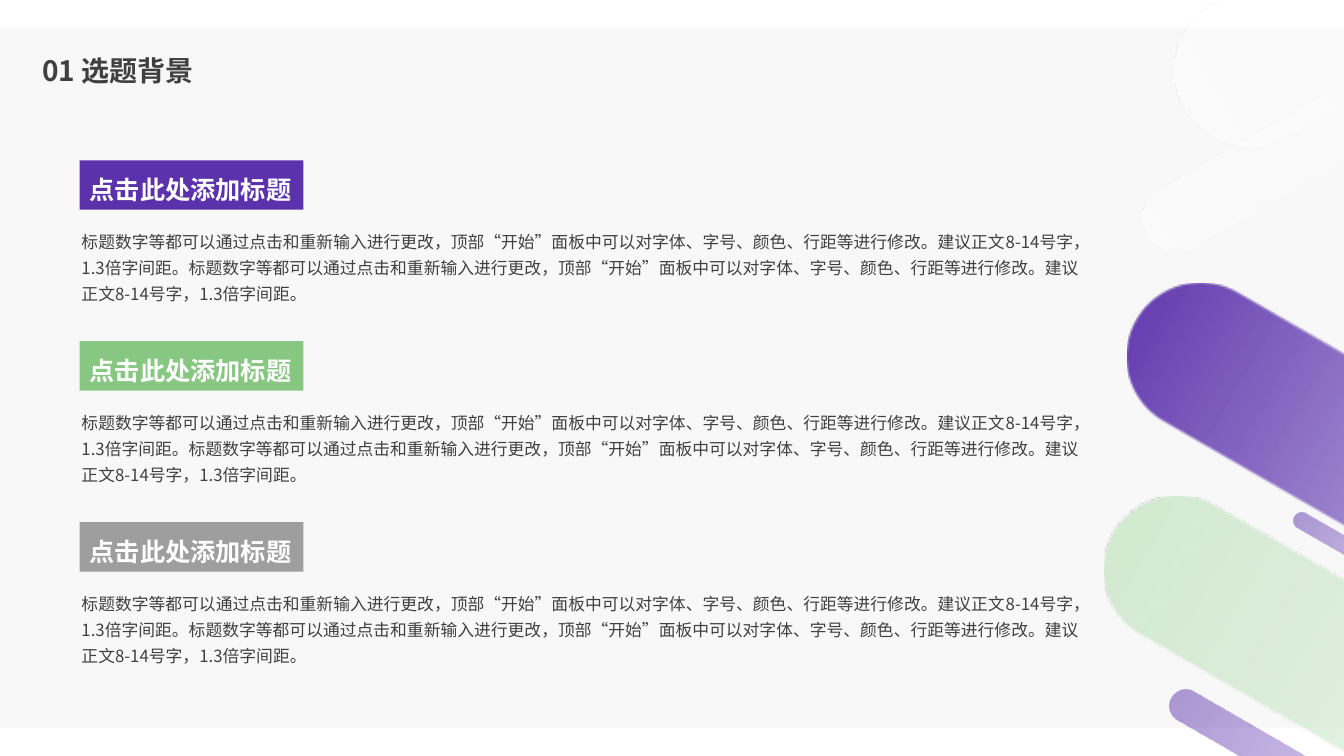
from lxml.etree import SubElement
from pptx import Presentation
from pptx.dml.color import RGBColor
from pptx.enum.shapes import MSO_SHAPE
from pptx.enum.text import MSO_ANCHOR, MSO_AUTO_SIZE, PP_ALIGN
from pptx.oxml.ns import qn
from pptx.util import Inches, Pt

SANS = "Noto Sans CJK SC"
INK = "404040"
HEAD = "点击此处添加标题"
BODY = (
    "标题数字等都可以通过点击和重新输入进行更改，顶部“开始”面板中可以对"
    "字体、字号、颜色、行距等进行修改。建议正文8-14号字，1.3倍字间距。"
) * 2

# Gradient stops: position %, colour, opacity %
FADE = [(85, "FFFFFF", 50), (100, "FFFFFF", 50)]
PURPLE = [(0, "5B32AB", 100), (23, "5F34B2", 40)] + FADE
LILAC = [(0, "5B32AB", 50), (23, "5F34B2", 40)] + FADE
GREEN = [(0, "D0E9CE", 100), (22, "D0E9CE", 50)] + FADE
WHITE = [(0, "FFFFFF", 50), (21, "FFFFFF", 29), (85, "FFFFFF", 0), (100, "FFFFFF", 0)]

# Left, top, length, thickness before turning; turn in degrees; stops
PILLS = [
    (9.9, 7.58, 20.55, 1.47, 30, PURPLE),
    (10.96, -2.65, 11.87, 1.51, -30, WHITE),
    (11.02, 0.68, 5.27, 0.67, -30, WHITE),
    (9.68, 9.7, 20.55, 1.47, 30, GREEN),
    (12.68, 5.65, 2.44, 0.17, 30, LILAC),
    (11.31, 7.93, 4.69, 0.33, 30, LILAC),
]


def color(code):
    return RGBColor.from_string(code)


def write(shape, text, font, size, code, bold=False, space=1.3, wrap=True):
    frame = shape.text_frame
    frame.word_wrap = wrap
    para = frame.paragraphs[0]
    para.alignment = PP_ALIGN.LEFT
    para.line_spacing = space
    run = para.add_run()
    run.text = text
    for key, value in {"name": font, "size": Pt(size), "bold": bold}.items():
        setattr(run.font, key, value)
    run.font.color.rgb = color(code)
    SubElement(run.font._element, qn("a:ea"), typeface=SANS)
    return frame


def add_block(shapes, kind, box, code):
    block = shapes.add_shape(kind, *map(Inches, box))
    block.shadow.inherit = False
    block.line.fill.background()
    block.fill.solid()
    block.fill.fore_color.rgb = color(code)
    return block


def fade(shape, stops):
    """Replace the fill by a gradient along the shape's length."""
    shape.fill.gradient()
    shape.fill.gradient_angle = 0
    grad = shape._element.spPr.find(qn("a:gradFill"))
    grad.set("rotWithShape", "1")
    items = grad.find(qn("a:gsLst"))
    for old in list(items):
        items.remove(old)
    for spot, code, alpha in stops:
        stop = SubElement(items, qn("a:gs"), pos=str(spot * 1000))
        tint = SubElement(stop, qn("a:srgbClr"), val=code)
        SubElement(tint, qn("a:alpha"), val=str(alpha * 1000))


def add_decor(shapes):
    add_block(shapes, MSO_SHAPE.RECTANGLE, (0, 0.28, 13.33, 6.94), "F8F8F8")
    for *box, turn, stops in PILLS:
        pill = add_block(shapes, MSO_SHAPE.ROUNDED_RECTANGLE, box, "FFFFFF")
        pill.adjustments[0] = 0.5
        pill.rotation = turn
        fade(pill, stops)


def add_title(title, box):
    for key, value in zip(("left", "top", "width", "height"), box):
        setattr(title, key, Inches(value))
    frame = write(title, "01 选题背景", SANS, 20, INK, True, 0.9)
    frame.vertical_anchor = MSO_ANCHOR.MIDDLE
    frame.paragraphs[0].space_before = Pt(10)


def add_topic(slide, left, top, width, code):
    """Place a coloured heading with its paragraph below."""
    shapes = slide.shapes.add_group_shape().shapes
    box = (left, top + 0.6, width, 0.89)
    note = shapes.add_textbox(*map(Inches, box))
    frame = write(note, BODY, SANS, 12, INK)
    frame.auto_size = MSO_AUTO_SIZE.SHAPE_TO_FIT_TEXT
    tag = add_block(shapes, MSO_SHAPE.RECTANGLE, (left + 0.08, top, 2.22, 0.49), code)
    frame = write(tag, HEAD, "TeX Gyre Adventor", 18, "FFFFFF", True, wrap=False)
    frame.vertical_anchor = MSO_ANCHOR.TOP
    frame.auto_size = MSO_AUTO_SIZE.SHAPE_TO_FIT_TEXT


def main():
    deck = Presentation()
    deck.slide_width, deck.slide_height = Inches(13.33), Inches(7.5)
    slide = deck.slides.add_slide(deck.slide_layouts[5])
    add_decor(slide.shapes)
    title = slide.shapes.title
    slide.shapes._spTree.append(title._element)
    add_title(title, (0.32, 0.43, 4.99, 0.58))
    for row, code in enumerate(("5B32AB", "87C782", "9E9E9E")):
        add_topic(slide, 0.71, 1.59 + 1.795 * row, 10.19, code)
    deck.save("out.pptx")


if __name__ == "__main__":
    main()
